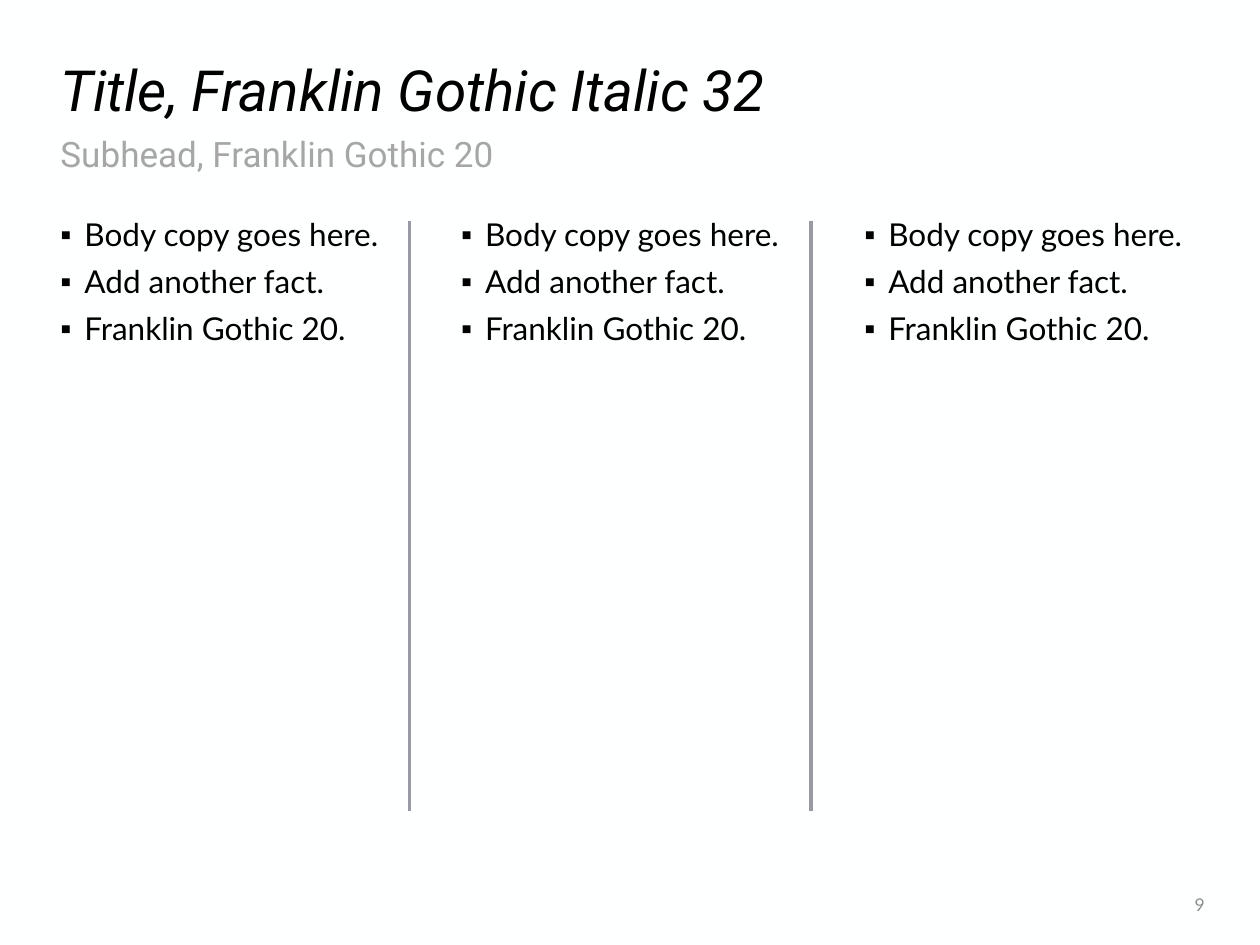
from pptx import Presentation
from pptx.dml.color import RGBColor
from pptx.enum.shapes import MSO_CONNECTOR
from pptx.enum.text import MSO_ANCHOR, MSO_AUTO_SIZE, PP_ALIGN
from pptx.oxml.ns import qn
from pptx.util import Inches, Pt
from lxml.etree import SubElement

COMPARISON_LAYOUT = 4
BODY_LINES = ["Body copy goes here.", "Add another fact.", "Franklin Gothic 20."]
COLUMN_LEFTS = [0.38, 3.56, 6.76]
DIVIDER_POSITIONS = [3.25, 6.44]


def color(hex_value):
    return RGBColor.from_string(hex_value)


def place(shape, left, top, width, height):
    shape.left, shape.top = Inches(left), Inches(top)
    shape.width, shape.height = Inches(width), Inches(height)


def add_bullet(paragraph):
    properties = paragraph._p.get_or_add_pPr()
    properties.set("marL", str(Inches(0.19)))
    properties.set("indent", str(-Inches(0.19)))
    SubElement(properties, qn("a:buChar")).set("char", "▪")


def write(shape, lines, font_name, size, hex_value, anchor=MSO_ANCHOR.TOP,
          alignment=PP_ALIGN.LEFT, line_spacing=0.9, bulleted=False, italic=False):
    text_frame = shape.text_frame
    text_frame.text = "\n".join(lines)
    text_frame.word_wrap = True
    text_frame.auto_size = MSO_AUTO_SIZE.NONE
    text_frame.vertical_anchor = anchor
    for index, paragraph in enumerate(text_frame.paragraphs):
        if bulleted:
            add_bullet(paragraph)
        paragraph.alignment = alignment
        paragraph.line_spacing = line_spacing
        paragraph.space_before = Pt(7.5 if index else 0)
        for run in paragraph.runs:
            run.font.name = font_name
            run.font.size = Pt(size)
            run.font.bold = False
            run.font.italic = italic
            run.font.color.rgb = color(hex_value)


def add_divider(slide, x):
    line = slide.shapes.add_connector(
        MSO_CONNECTOR.STRAIGHT, Inches(x), Inches(1.75), Inches(x), Inches(6.44))
    line.line.color.rgb = color("979AA2")
    line.line.width = Pt(2.25)
    SubElement(line._element.spPr, qn("a:effectLst"))


def add_page_number(slide, number):
    box = slide.shapes.add_textbox(Inches(8.66), Inches(7), Inches(1), Inches(0.35))
    write(box, [number], "Lato", 10, "8C8C8C", MSO_ANCHOR.MIDDLE,
          PP_ALIGN.RIGHT, line_spacing=1.0)


def main():
    presentation = Presentation()
    presentation.slide_width, presentation.slide_height = Inches(10), Inches(7.5)
    slide = presentation.slides.add_slide(presentation.slide_layouts[COMPARISON_LAYOUT])
    slide.background.fill.solid()
    slide.background.fill.fore_color.rgb = color("FEFFFF")

    title, subhead, *columns = slide.placeholders
    place(title, 0.38, 0.42, 9.24, 0.64)
    write(title, ["Title, Franklin Gothic Italic 32"], "Roboto", 32.4, "000000",
          MSO_ANCHOR.MIDDLE, italic=True)
    place(subhead, 0.38, 1.04, 9.25, 0.4)
    write(subhead, ["Subhead, Franklin Gothic 20"], "Roboto", 20, "A6A6A6")

    for column, left in zip(columns, COLUMN_LEFTS):
        place(column, left, 1.69, 2.88, 4.8)
        write(column, BODY_LINES, "Lato", 18, "000000", bulleted=True)
    for x in DIVIDER_POSITIONS:
        add_divider(slide, x)
    add_page_number(slide, "9")

    presentation.save("out.pptx")


if __name__ == "__main__":
    main()
